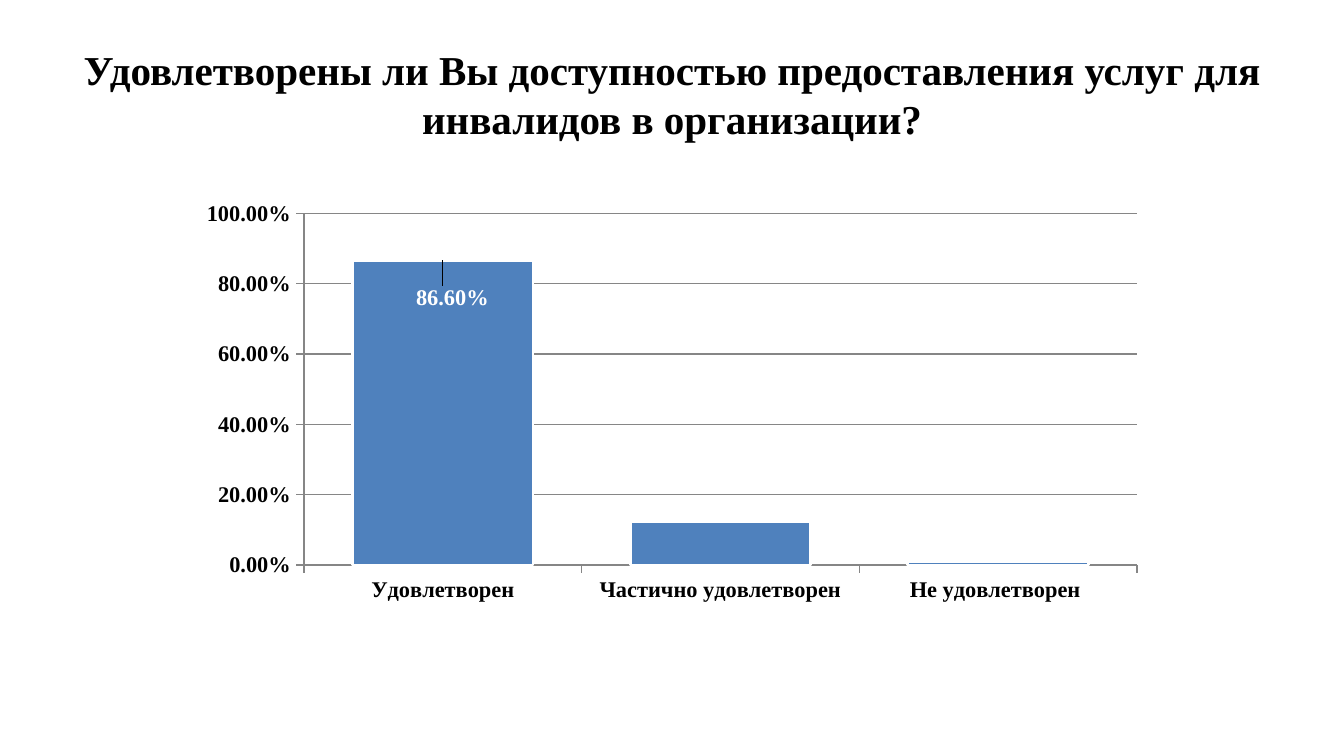
from dataclasses import dataclass

from lxml import etree
from pptx import Presentation
from pptx.chart.data import CategoryChartData
from pptx.dml.color import RGBColor
from pptx.enum.chart import XL_CHART_TYPE as ChartType
from pptx.enum.chart import XL_LABEL_POSITION as LabelPosition
from pptx.enum.chart import XL_TICK_MARK as TickMark
from pptx.enum.text import MSO_ANCHOR as Anchor
from pptx.enum.text import PP_ALIGN as Align
from pptx.oxml.ns import qn
from pptx.util import Cm, Pt


@dataclass(frozen=True)
class Theme:
    font: str = "Times New Roman"
    chart_font: str = "Calibri"
    text: RGBColor = RGBColor(0, 0, 0)
    bar: RGBColor = RGBColor(0x4F, 0x81, 0xBD)
    light: RGBColor = RGBColor(0xFF, 0xFF, 0xFF)
    grid: RGBColor = RGBColor(0x86, 0x86, 0x86)
    title_size: int = 22
    label_size: int = 12
    chart_size: int = 10


class SurveySlide:
    def __init__(self, slide, theme):
        self.slide = slide
        self.theme = theme

    def style_font(self, font, size, color):
        font.name = self.theme.font
        font.size = Pt(size)
        font.bold = True
        font.color.rgb = color

    def style_line(self, line, color, width):
        line.color.rgb = color
        line.width = Pt(width)

    def layout(self, **settings):
        """Build a manual chart layout from its settings, in schema order."""
        layout = etree.Element(qn("c:layout"))
        manual = etree.SubElement(layout, qn("c:manualLayout"))
        for tag, value in settings.items():
            etree.SubElement(manual, qn(f"c:{tag}")).set("val", str(value))
        return layout

    def title(self, text, left, top, width, height):
        question = self.slide.shapes.add_textbox(left, top, width, height).text_frame
        question.word_wrap = True
        question.vertical_anchor = Anchor.MIDDLE
        question.text = text
        paragraph = question.paragraphs[0]
        paragraph.alignment = Align.CENTER
        self.style_font(paragraph.runs[0].font, self.theme.title_size, self.theme.text)

    def column_chart(self, answers, left, top, width, height):
        theme = self.theme
        data = CategoryChartData(number_format="0.00%")
        data.categories = list(answers)
        data.add_series("Series 1", list(answers.values()))
        chart = self.slide.shapes.add_chart(
            ChartType.COLUMN_CLUSTERED, left, top, width, height, data).chart
        chart.has_legend = False
        chart.has_title = False
        chart.font.name = theme.chart_font
        chart.font.size = Pt(theme.chart_size)
        chart.font.color.rgb = theme.text

        # Axes
        shares = chart.value_axis
        for axis in (chart.category_axis, shares):
            axis.major_tick_mark = TickMark.OUTSIDE
            axis.minor_tick_mark = TickMark.NONE
            self.style_font(axis.tick_labels.font, theme.label_size, theme.text)
            self.style_line(axis.format.line, theme.grid, 0.75)
        shares.minimum_scale, shares.maximum_scale, shares.major_unit = 0, 1, 0.2
        shares.tick_labels.number_format = "0.00%"
        shares.tick_labels.number_format_is_linked = False
        shares.has_major_gridlines = True
        self.style_line(shares.major_gridlines.format.line, theme.grid, 0.75)

        # Columns
        plot = chart.plots[0]
        plot.gap_width = 54
        plot.vary_by_categories = False
        columns = plot.series[0]
        columns.format.fill.solid()
        columns.format.fill.fore_color.rgb = theme.bar
        self.style_line(columns.format.line, theme.light, 1.5)

        # Value labels, the first one lowered into its column
        labels = columns.data_labels
        labels.show_value = True
        labels.number_format = "0.00%"
        labels.number_format_is_linked = False
        labels.position = LabelPosition.OUTSIDE_END
        self.style_font(labels.font, theme.label_size, theme.light)
        top_label = columns.points[0].data_label
        self.style_font(top_label.font, theme.label_size, theme.light)
        top_label.position = LabelPosition.OUTSIDE_END
        label_index = chart.element.find(f".//{qn('c:dLbl')}/{qn('c:idx')}")
        label_index.addnext(self.layout(x=0.01, y=0.12))

        # Plot area
        plot_area = chart.element.find(f".//{qn('c:plotArea')}")
        for automatic in plot_area.findall(qn("c:layout")):
            plot_area.remove(automatic)
        plot_area.insert(0, self.layout(
            layoutTarget="inner", xMode="edge", yMode="edge",
            x=0.113, y=0.036, w=0.873, h=0.781))


def main():
    deck = Presentation()
    deck.slide_width, deck.slide_height = Cm(25.4), Cm(14.29)
    survey = SurveySlide(deck.slides.add_slide(deck.slide_layouts[6]), Theme())

    survey.title(
        "Удовлетворены ли Вы доступностью предоставления услуг для инвалидов в организации?",
        Cm(1.27), Cm(0.58), Cm(22.86), Cm(2.39))
    survey.column_chart(
        {"Удовлетворен": 0.866, "Частично удовлетворен": 0.123, "Не удовлетворен ": 0.011},
        Cm(3.71), Cm(3.73), Cm(18.03), Cm(8.51))

    deck.save("out.pptx")


if __name__ == "__main__":
    main()
